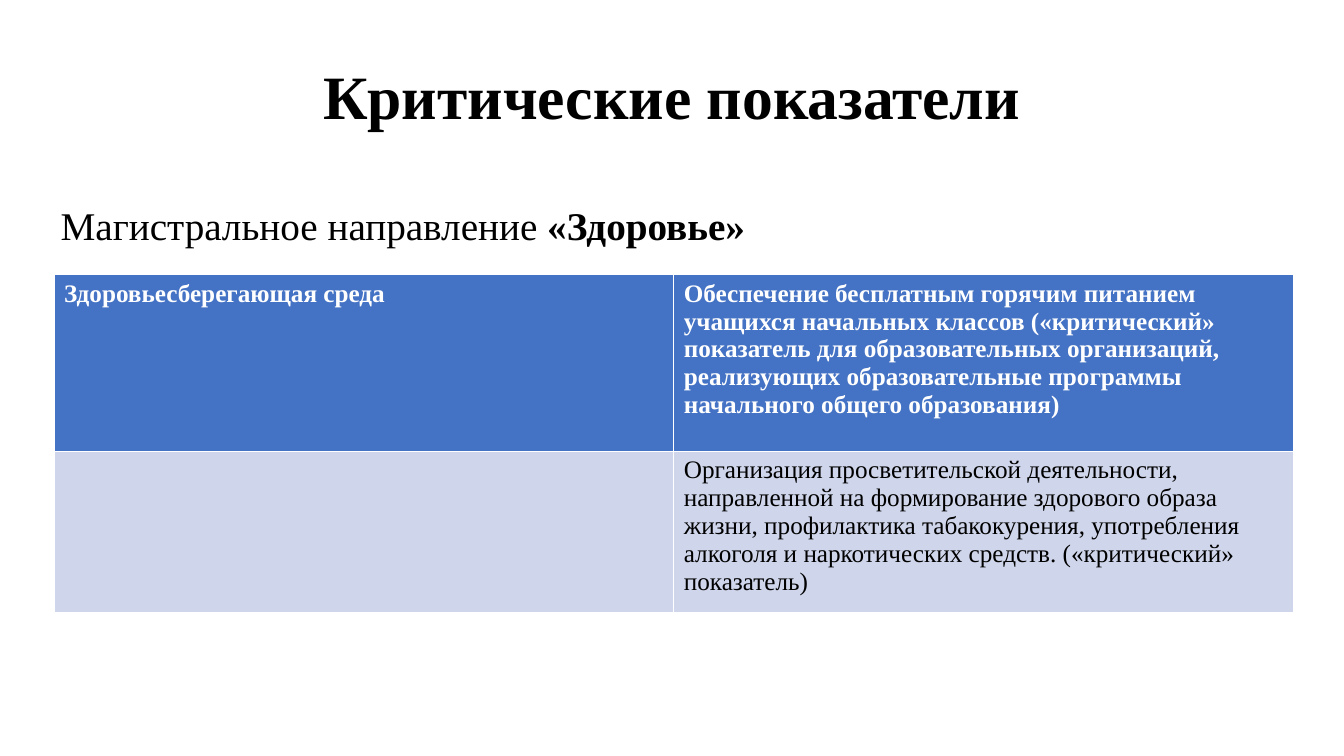
from pptx import Presentation
from pptx import util as u
from pptx.dml.color import RGBColor
from pptx.enum import text

BLACK = RGBColor(0x00, 0x00, 0x00)
WHITE = RGBColor(0xFF, 0xFF, 0xFF)
BLUE = RGBColor(0x44, 0x72, 0xC4)
PALE = RGBColor(0xCF, 0xD5, 0xEA)
FONT = "Times New Roman"

ROWS = [
    (4.45, BLUE, WHITE, True, [
        "Здоровьесберегающая среда",
        "Обеспечение бесплатным горячим питанием учащихся начальных классов "
        "(«критический» показатель для образовательных организаций, реализующих "
        "образовательные программы начального общего образования)"]),
    (3.81, PALE, BLACK, False, [
        "",
        "Организация просветительской деятельности, направленной на формирование "
        "здорового образа жизни, профилактика табакокурения, употребления алкоголя "
        "и наркотических средств. («критический» показатель)"]),
]


def assign(item, form):
    for key, value in form.items():
        setattr(item, key, value)


def add_run(para, words, size, color, bold):
    run = para.add_run()
    run.text = words
    assign(run.font, {"name": FONT, "size": u.Pt(size), "bold": bold})
    run.font.color.rgb = color


def add_label(slide, box, runs, size, frame_form, para_form):
    frame = slide.shapes.add_textbox(*map(u.Cm, box)).text_frame
    assign(frame, {"word_wrap": True, **frame_form})
    para = frame.paragraphs[0]
    assign(para, {"line_spacing": 0.9, **para_form})
    for words, bold in runs:
        add_run(para, words, size, BLACK, bold)


def add_title(slide, box):
    add_label(slide, box, [("Критические показатели", True)], 44,
              {"vertical_anchor": text.MSO_ANCHOR.MIDDLE},
              {"alignment": text.PP_ALIGN.CENTER})


def add_topic(slide, box):
    add_label(slide, box,
              [("Магистральное направление ", False), ("«Здоровье»", True)], 28,
              {"vertical_anchor": text.MSO_ANCHOR.TOP},
              {"space_before": u.Pt(10)})


def add_grid(slide, box):
    table = slide.shapes.add_table(len(ROWS), 2, *map(u.Cm, box)).table
    for col in table.columns:
        col.width = u.Cm(box[2] / 2)
    for row, (height, fill, color, bold, cells) in zip(table.rows, ROWS):
        row.height = u.Cm(height)
        for cell, words in zip(row.cells, cells):
            cell.fill.solid()
            cell.fill.fore_color.rgb = fill
            if words:
                add_run(cell.text_frame.paragraphs[0], words, 18, color, bold)


def main():
    deck = Presentation()
    assign(deck, {"slide_width": u.Cm(33.87), "slide_height": u.Cm(19.05)})
    slide = deck.slides.add_slide(deck.slide_layouts[6])
    add_title(slide, (2.33, 1.01, 29.21, 3))
    add_topic(slide, (1.28, 5.08, 31.24, 12.09))
    add_grid(slide, (1.36, 6.92, 31.24, sum(row[0] for row in ROWS)))
    deck.save("out.pptx")


if __name__ == "__main__":
    main()
